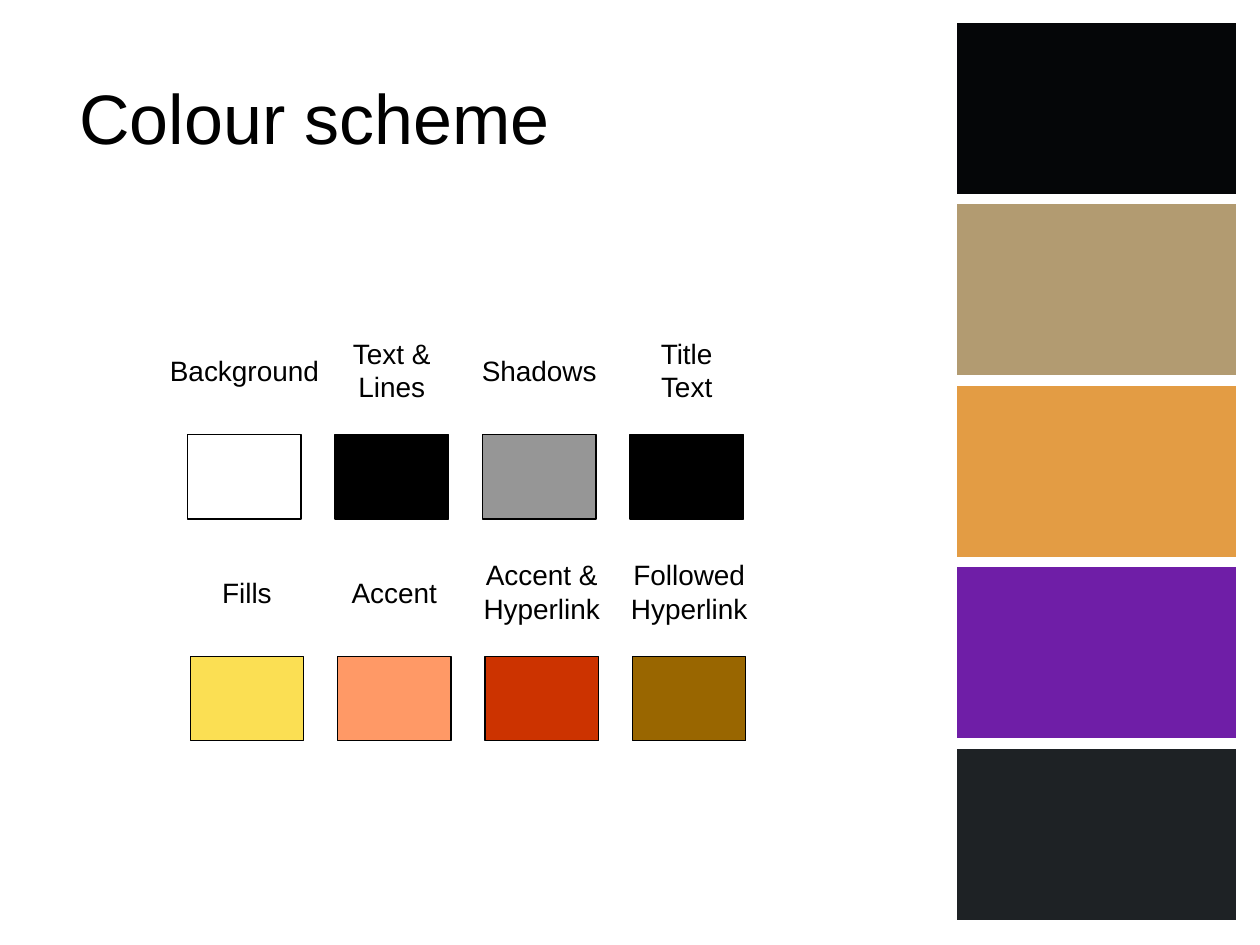
from dataclasses import dataclass

from pptx import Presentation
from pptx.dml.color import RGBColor
from pptx.enum.shapes import MSO_SHAPE
from pptx.enum.text import MSO_ANCHOR, MSO_AUTO_SIZE, PP_ALIGN
from pptx.util import Inches, Pt


@dataclass(frozen=True)
class Theme:
    font: str = "Arial"
    title_size: int = 40
    label_size: int = 16
    ink: str = "000000"
    paper: str = "FFFFFF"
    bands: tuple = ("050608", "B29B71", "E39C44", "6F1EA7", "1E2225")


class SlideBuilder:
    def __init__(self, slide, theme):
        self.slide = slide
        self.theme = theme

    def style_text(self, frame, size, align):
        for paragraph in frame.paragraphs:
            paragraph.alignment = align
            for run in paragraph.runs:
                run.font.name = self.theme.font
                run.font.size = Pt(size)
                run.font.color.rgb = RGBColor.from_string(self.theme.ink)

    def title(self, text, left, top, width, height):
        heading = self.slide.shapes.title
        heading.left, heading.top = Inches(left), Inches(top)
        heading.width, heading.height = Inches(width), Inches(height)
        frame = heading.text_frame
        frame.text = text
        frame.vertical_anchor = MSO_ANCHOR.MIDDLE
        self.style_text(frame, self.theme.title_size, PP_ALIGN.LEFT)

    def block(self, left, top, width, height, fill, line, line_width):
        block = self.slide.shapes.add_shape(
            MSO_SHAPE.RECTANGLE, Inches(left), Inches(top), Inches(width), Inches(height))
        block.shadow.inherit = False
        block.fill.solid()
        block.fill.fore_color.rgb = RGBColor.from_string(fill)
        block.line.color.rgb = RGBColor.from_string(line)
        block.line.width = Pt(line_width)

    def label(self, text, center_x, center_y, width):
        """Add a label centred on a point, as tall as its lines need."""
        line_count = len(text.replace("\v", "\n").split("\n"))
        height = 0.1 + 0.27 * line_count
        box = self.slide.shapes.add_textbox(
            Inches(center_x - width / 2), Inches(center_y - height / 2),
            Inches(width), Inches(height))
        frame = box.text_frame
        frame.word_wrap = False
        frame.auto_size = MSO_AUTO_SIZE.SHAPE_TO_FIT_TEXT
        frame.text = text
        self.style_text(frame, self.theme.label_size, PP_ALIGN.CENTER)


# Each row: left edge, label centre, swatch top, (label, label width, colour)
SWATCH_ROWS = [
    (1.49, 2.94, 3.45, [
        ("Background", 1.4, "FFFFFF"),
        ("Text &\nLines", 0.86, "000000"),
        ("Shadows", 1.14, "969696"),
        ("Title\vText", 0.66, "000000"),
    ]),
    (1.51, 4.7, 5.21, [
        ("Fills", 0.64, "FBDF53"),
        ("Accent", 0.9, "FF9966"),
        ("Accent &\nHyperlink", 1.16, "CC3300"),
        ("Followed\nHyperlink", 1.16, "996600"),
    ]),
]
SWATCH_WIDTH, SWATCH_HEIGHT, SWATCH_PITCH = 0.9, 0.67, 1.17
BAND_LEFT, BAND_TOP, BAND_WIDTH, BAND_HEIGHT = 7.55, 0.14, 2.3, 1.44


def main():
    theme = Theme()
    deck = Presentation()
    deck.slide_width, deck.slide_height = Inches(10), Inches(7.5)
    title_only = deck.slide_layouts[5]
    builder = SlideBuilder(deck.slides.add_slide(title_only), theme)

    # Colour bands down the right side
    for index, colour in enumerate(theme.bands):
        builder.block(BAND_LEFT, BAND_TOP + index * BAND_HEIGHT,
                      BAND_WIDTH, BAND_HEIGHT, colour, theme.paper, 6)

    # Title
    builder.title("Colour scheme", 0.53, 0.3, 8.97, 1.25)

    # Labelled swatches
    for row_left, label_center, swatch_top, swatches in SWATCH_ROWS:
        for column, (name, label_width, colour) in enumerate(swatches):
            left = row_left + column * SWATCH_PITCH
            builder.block(left, swatch_top, SWATCH_WIDTH, SWATCH_HEIGHT,
                          colour, theme.ink, 0.75)
            builder.label(name, left + SWATCH_WIDTH / 2, label_center, label_width)

    deck.save("out.pptx")


if __name__ == "__main__":
    main()
